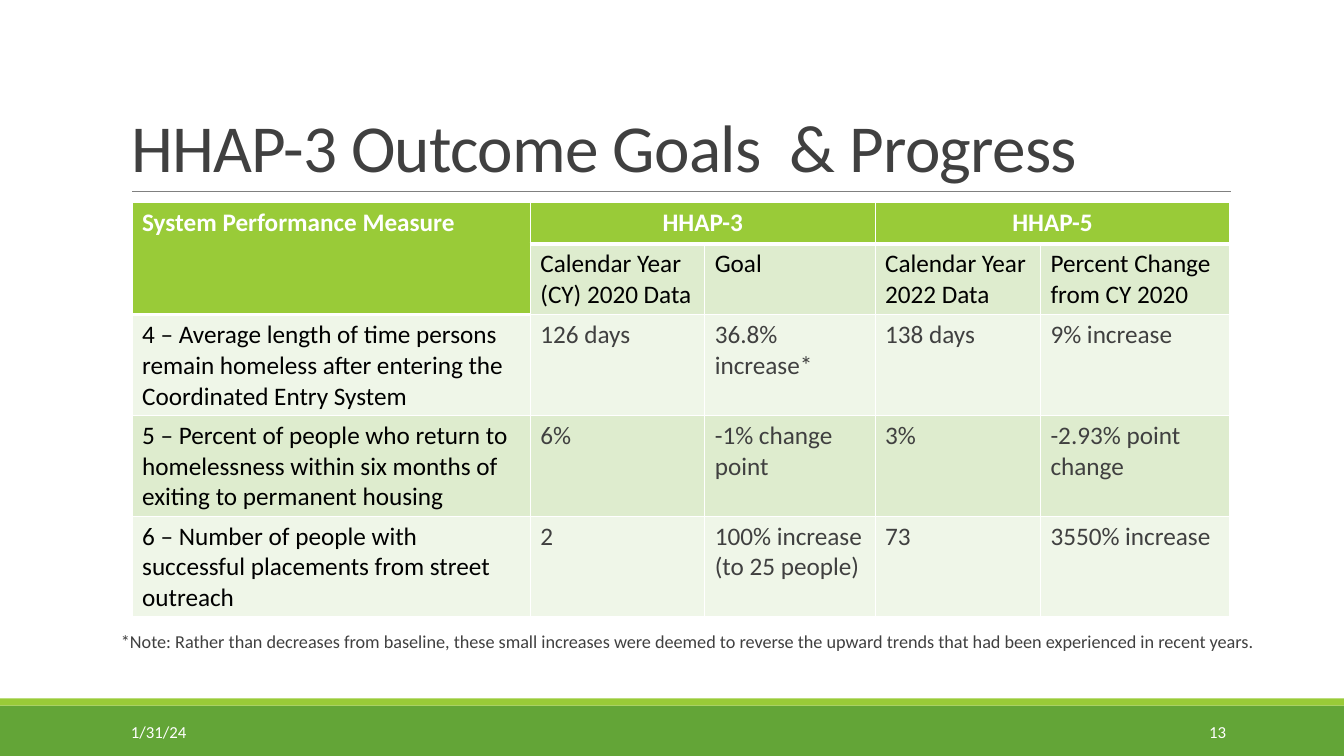
from dataclasses import dataclass

from lxml import etree
from pptx import Presentation
from pptx import util as u
from pptx.dml.color import RGBColor
from pptx.enum import shapes, text
from pptx.oxml import ns

WIDE, HIGH = 13.33, 7.5
LEFT = text.PP_ALIGN.LEFT
MID = text.PP_ALIGN.CENTER
RIGHT = text.PP_ALIGN.RIGHT


@dataclass(frozen=True)
class Theme:
    font: str = "Calibri"
    green: str = "63A537"
    lime: str = "99CB38"
    pale: str = "DEECCE"
    mist: str = "EFF6E8"
    ink: str = "404040"
    black: str = "000000"
    white: str = "FFFFFF"
    gray: str = "808080"
    title: int = 48
    cell: int = 18
    note: int = 13
    foot: int = 12


T = Theme()
COLS = (3.95, 1.73, 1.69, 1.64, 1.88)
ROWS = (0.41, 0.7, 1, 1, 1)
DATA = (
    ("System Performance Measure", "HHAP-3", "", "HHAP-5", ""),
    ("", "Calendar Year (CY) 2020 Data", "Goal",
     "Calendar Year 2022 Data", "Percent Change from CY 2020"),
    ("4 – Average length of time persons remain homeless after entering "
     "the Coordinated Entry System",
     "126 days", "36.8% increase*", "138 days", "9% increase"),
    ("5 – Percent of people who return to homelessness within six months "
     "of exiting to permanent housing",
     "6%", "-1% change point", "3%", "-2.93% point change"),
    ("6 – Number of people with successful placements from street outreach",
     "2", "100% increase (to 25 people)", "73", "3550% increase"),
)
NOTE = ("*Note: Rather than decreases from baseline, these small increases "
        "were deemed to reverse the upward trends that had been experienced "
        "in recent years.")


def rgb(code):
    return RGBColor.from_string(code)


def inch(box):
    return [u.Inches(v) for v in box]


def write(frame, words, size, color, align=LEFT, bold=False):
    frame.text = words
    frame.word_wrap = True
    para = frame.paragraphs[0]
    para.alignment = align
    for run in para.runs:
        font = run.font
        font.name, font.size, font.bold = T.font, u.Pt(size), bold
        font.color.rgb = rgb(color)
    return para


def label(slide, box, words, size, color, align=LEFT):
    frame = slide.shapes.add_textbox(*inch(box)).text_frame
    para = write(frame, words, size, color, align)
    return frame, para


def band(slide, box, color):
    bar = slide.shapes.add_shape(shapes.MSO_SHAPE.RECTANGLE, *inch(box))
    bar.shadow.inherit = False
    bar.fill.solid()
    bar.fill.fore_color.rgb = rgb(color)
    bar.line.fill.background()


def edge(cell, sides):
    """Draw white cell borders; sides maps a side to its width in points."""
    props = cell._tc.get_or_add_tcPr()
    for spot, side in enumerate("LRTB"):
        line = etree.Element(ns.qn(f"a:ln{side}"), w=str(u.Pt(sides[side])))
        fill = etree.SubElement(line, ns.qn("a:solidFill"))
        etree.SubElement(fill, ns.qn("a:srgbClr"), val=T.white)
        props.insert(spot, line)


def header(slide, box):
    left, top, wide, high = box
    title = slide.shapes.title
    title.left, title.top, title.width, title.height = inch(box)
    frame = title.text_frame
    para = write(frame, "HHAP-3 Outcome Goals  & Progress", T.title, T.ink)
    frame.vertical_anchor = text.MSO_ANCHOR.BOTTOM
    frame.auto_size = text.MSO_AUTO_SIZE.NONE
    para.line_spacing = 0.85
    para.runs[0]._r.get_or_add_rPr().set("spc", "-50")
    # Rule below the title
    start, base = left + 0.11, top + high
    rule = slide.shapes.add_connector(
        shapes.MSO_CONNECTOR.STRAIGHT,
        *inch((start, base, start + wide - 0.1, base)))
    rule.line.color.rgb = rgb(T.gray)
    rule.line.width = u.Pt(0.5)
    etree.SubElement(rule._element.spPr, ns.qn("a:effectLst"))


def is_head(row, col):
    return row == 0 or (row == 1 and col == 0)


def goals(slide, left, top):
    box = (left, top, sum(COLS), sum(ROWS))
    table = slide.shapes.add_table(
        len(ROWS), len(COLS), *inch(box)).table
    for col, wide in zip(table.columns, COLS):
        col.width = u.Inches(wide)
    for row, high in zip(table.rows, ROWS):
        row.height = u.Inches(high)

    for r, line in enumerate(DATA):
        for c, words in enumerate(line):
            cell, head = table.cell(r, c), is_head(r, c)
            plain = T.black if r == 1 or c == 0 else T.ink
            write(cell.text_frame, words, T.cell, T.white if head else plain,
                  MID if r == 0 and c else LEFT, head)
            cell.fill.solid()
            cell.fill.fore_color.rgb = rgb(
                T.lime if head else T.pale if r % 2 else T.mist)
            edge(cell, {"L": 1, "R": 1, "B": 3 if head else 1,
                        "T": 3 if r and is_head(r - 1, c) else 1})

    # Header spans
    for first, last in (((0, 0), (1, 0)), ((0, 1), (0, 2)), ((0, 3), (0, 4))):
        table.cell(*first).merge(table.cell(*last))


def remark(slide, box):
    frame, para = label(slide, box, NOTE, T.note, T.ink)
    frame.margin_left = frame.margin_right = 0
    para.line_spacing = 0.9
    para.space_before, para.space_after = u.Pt(12), u.Pt(2)


def footer(slide, box):
    left, top, wide, high = box
    band(slide, box, T.green)
    band(slide, (left, top - 0.07, wide, 0.07), T.lime)
    for start, span, words, align in ((1.2, 2.7, "1/31/24", LEFT),
                                      (10.83, 1.43, "13", RIGHT)):
        spot = (left + start, top + 0.06, span, high - 0.1)
        frame, _ = label(slide, spot, words, T.foot, T.white, align)
        frame.vertical_anchor = text.MSO_ANCHOR.MIDDLE


def main():
    deck = Presentation()
    deck.slide_width, deck.slide_height = inch((WIDE, HIGH))
    slide = deck.slides.add_slide(deck.slide_layouts.get_by_name("Title Only"))
    footer(slide, (0, HIGH - 0.5, WIDE, 0.5))
    header(slide, (1.2, 0.31, 11, 1.59))
    goals(slide, 1.31, 2.01)
    remark(slide, (1.2, 6.23, 11.34, 0.6))
    deck.save("out.pptx")


if __name__ == "__main__":
    main()
